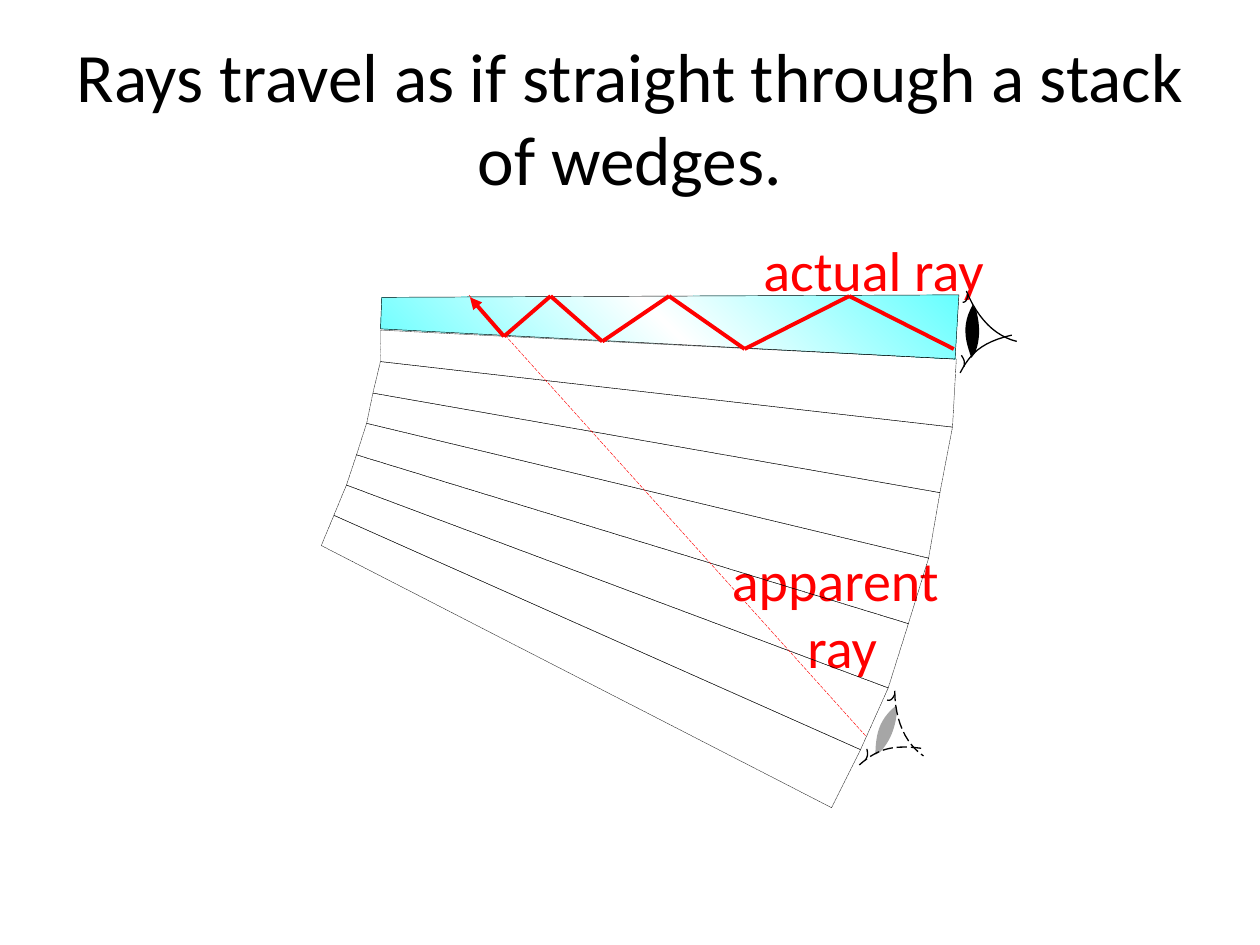
from copy import deepcopy
from dataclasses import dataclass
from itertools import pairwise
from math import cos, radians, sin
from typing import Optional

from pptx import Presentation
from pptx.dml.color import RGBColor
from pptx.enum.dml import MSO_LINE
from pptx.enum.shapes import MSO_CONNECTOR
from pptx.enum.text import MSO_ANCHOR, MSO_AUTO_SIZE, PP_ALIGN
from pptx.oxml.ns import qn
from pptx.util import Inches, Pt
from lxml.etree import SubElement

Point = tuple[float, float]
FONT, BLACK, RED, CYAN, WHITE, GREY = "Calibri", "000000", "FF0000", "66FFFF", "FFFFFF", "A6A6A6"


@dataclass
class Stroke:
    color: str
    width: float
    dash: Optional[MSO_LINE] = None


@dataclass
class Eye:
    corner: Point
    turn: float
    pupil: str
    lid_dash: Optional[MSO_LINE] = None


@dataclass
class Label:
    left: float
    top: float
    width: float
    height: float
    lines: list[tuple[str, float]]  # wording and left indent


def hex_color(value: str) -> RGBColor:
    return RGBColor.from_string(value)


def style_line(line, stroke: Stroke) -> None:
    line.color.rgb = hex_color(stroke.color)
    line.width = Pt(stroke.width)
    if stroke.dash is not None:
        line.dash_style = stroke.dash


def style_run(span, size: float, color: str) -> None:
    span.font.name = FONT
    span.font.size = Pt(size)
    span.font.color.rgb = hex_color(color)


def curve(start: Point, first: Point, second: Point, end: Point, steps: int = 12) -> list[Point]:
    """Points along a cubic curve."""
    points = []
    for step in range(steps + 1):
        t = step / steps
        weights = ((1 - t) ** 3, 3 * t * (1 - t) ** 2, 3 * t * t * (1 - t), t ** 3)
        points.append(tuple(sum(w * p[axis] for w, p in zip(weights, (start, first, second, end)))
                            for axis in (0, 1)))
    return points


def draw_outline(page, points: list[Point], closed: bool, fill: Optional[str] = None,
                 stroke: Optional[Stroke] = None):
    corners = [(Inches(x), Inches(y)) for x, y in points]
    builder = page.shapes.build_freeform(*corners[0], scale=1.0)
    builder.add_line_segments(corners[1:], close=closed)
    shape = builder.convert_to_shape()
    shape.shadow.inherit = False
    if fill:
        shape.fill.solid()
        shape.fill.fore_color.rgb = hex_color(fill)
    else:
        shape.fill.background()
    if stroke:
        style_line(shape.line, stroke)
    else:
        shape.line.fill.background()
    return shape


def draw_ray(page, start: Point, end: Point, stroke: Stroke, arrow: bool = False) -> None:
    ray = page.shapes.add_connector(MSO_CONNECTOR.STRAIGHT, *map(Inches, start + end))
    style_line(ray.line, stroke)
    if arrow:
        SubElement(ray.line._get_or_add_ln(), qn("a:tailEnd"), type="triangle")
    SubElement(ray._element.spPr, qn("a:effectLst"))


def draw_eye(page, eye: Eye) -> None:
    """Draw an eye, measured from the outer corner of its lids."""
    angle = radians(eye.turn)

    def place(points: list[Point]) -> list[Point]:
        return [(eye.corner[0] + x * cos(angle) - y * sin(angle),
                 eye.corner[1] + x * sin(angle) + y * cos(angle)) for x, y in points]

    pupil = ([(-0.32, -0.24)]
             + curve((-0.35, -0.29), (-0.44, -0.13), (-0.41, -0.01), (-0.36, 0.13))
             + curve((-0.33, 0.09), (-0.29, -0.02), (-0.29, -0.12), (-0.32, -0.24)))
    draw_outline(page, place(pupil), True, fill=eye.pupil)
    lids = [curve((-0.4, -0.4), (-0.31, -0.18), (-0.17, -0.04), (0, 0)),
            curve((-0.04, -0.05), (-0.29, 0.01), (-0.37, 0.1), (-0.45, 0.25))]
    lashes = [curve((-0.39, -0.38), (-0.39, -0.34), (-0.4, -0.31), (-0.43, -0.31)),
              curve((-0.42, 0.2), (-0.41, 0.16), (-0.42, 0.14), (-0.44, 0.11))]
    for lid in lids:
        draw_outline(page, place(lid), False, stroke=Stroke(BLACK, 0.75, eye.lid_dash))
    for lash in lashes:
        draw_outline(page, place(lash), False, stroke=Stroke(BLACK, 0.75))


def draw_label(page, label: Label) -> None:
    box = page.shapes.add_textbox(*map(Inches, (label.left, label.top, label.width, label.height)))
    frame = box.text_frame
    frame.word_wrap = False
    frame.auto_size = MSO_AUTO_SIZE.SHAPE_TO_FIT_TEXT
    for number, (wording, indent) in enumerate(label.lines):
        para = frame.add_paragraph() if number else frame.paragraphs[0]
        if indent:
            para._p.get_or_add_pPr().set("marL", str(Inches(indent)))
        span = para.add_run()
        span.text = wording
        style_run(span, 32, RED)


def main() -> None:
    deck = Presentation()
    deck.slide_width, deck.slide_height = Inches(10), Inches(7.5)
    page = deck.slides.add_slide(deck.slide_layouts[5])

    # Title
    title = page.shapes.title
    title.left, title.top, title.width, title.height = map(Inches, (0.5, 0.3, 9, 1.25))
    title.text_frame.vertical_anchor = MSO_ANCHOR.MIDDLE
    para = title.text_frame.paragraphs[0]
    para.alignment = PP_ALIGN.CENTER
    span = para.add_run()
    span.text = "Rays travel as if straight through a stack of wedges."
    style_run(span, 39.6, BLACK)

    # Real wedge, shaded cyan to white to cyan
    wedge = draw_outline(page, [(3.02, 2.61), (3.03, 2.36), (7.61, 2.34), (7.58, 2.85)], True,
                         stroke=Stroke(BLACK, 0.25))
    wedge.fill.gradient()
    wedge.fill.gradient_angle = 45
    stops = wedge.fill.gradient_stops
    first_stop = stops[0]._gs
    first_stop.addnext(deepcopy(first_stop))
    for stop, position, color in zip(wedge.fill.gradient_stops, (0, 0.5, 1), (CYAN, WHITE, CYAN)):
        stop.position = position
        stop.color.rgb = hex_color(color)

    # Labels and eyes
    draw_label(page, Label(5.96, 1.82, 1.97, 0.64, [("actual ray", 0)]))
    draw_eye(page, Eye((8.07, 2.71), 0, BLACK))
    draw_label(page, Label(5.71, 4.28, 1.96, 1.18, [("apparent", 0), ("ray", 0.6)]))
    draw_eye(page, Eye((7.33, 6), 21.1, GREY, MSO_LINE.LONG_DASH))

    # Stack of imagined wedges between neighbouring edges
    edges = [((3.02, 2.62), (7.59, 2.85)), ((3.02, 2.87), (7.56, 3.39)),
             ((2.96, 3.12), (7.46, 3.91)), ((2.91, 3.36), (7.37, 4.43)),
             ((2.83, 3.61), (7.21, 4.95)), ((2.75, 3.85), (7.05, 5.46)),
             ((2.65, 4.09), (6.83, 5.95)), ((2.55, 4.33), (6.6, 6.41))]
    for (upper_left, upper_right), (lower_left, lower_right) in pairwise(edges):
        draw_outline(page, [upper_left, lower_left, lower_right, upper_right], True,
                     stroke=Stroke(BLACK, 0.25, MSO_LINE.ROUND_DOT))

    # Apparent ray, then the actual ray bouncing to its arrowhead
    draw_ray(page, (6.87, 5.84), (3.72, 2.34), Stroke(RED, 0.25, MSO_LINE.LONG_DASH))
    bounces = [(7.57, 2.77), (6.74, 2.35), (5.91, 2.77), (5.31, 2.35),
               (4.78, 2.71), (4.37, 2.35), (4, 2.67), (3.73, 2.36)]
    for start, end in pairwise(bounces):
        draw_ray(page, start, end, Stroke(RED, 2.25), arrow=end == bounces[-1])

    deck.save("out.pptx")


if __name__ == "__main__":
    main()
